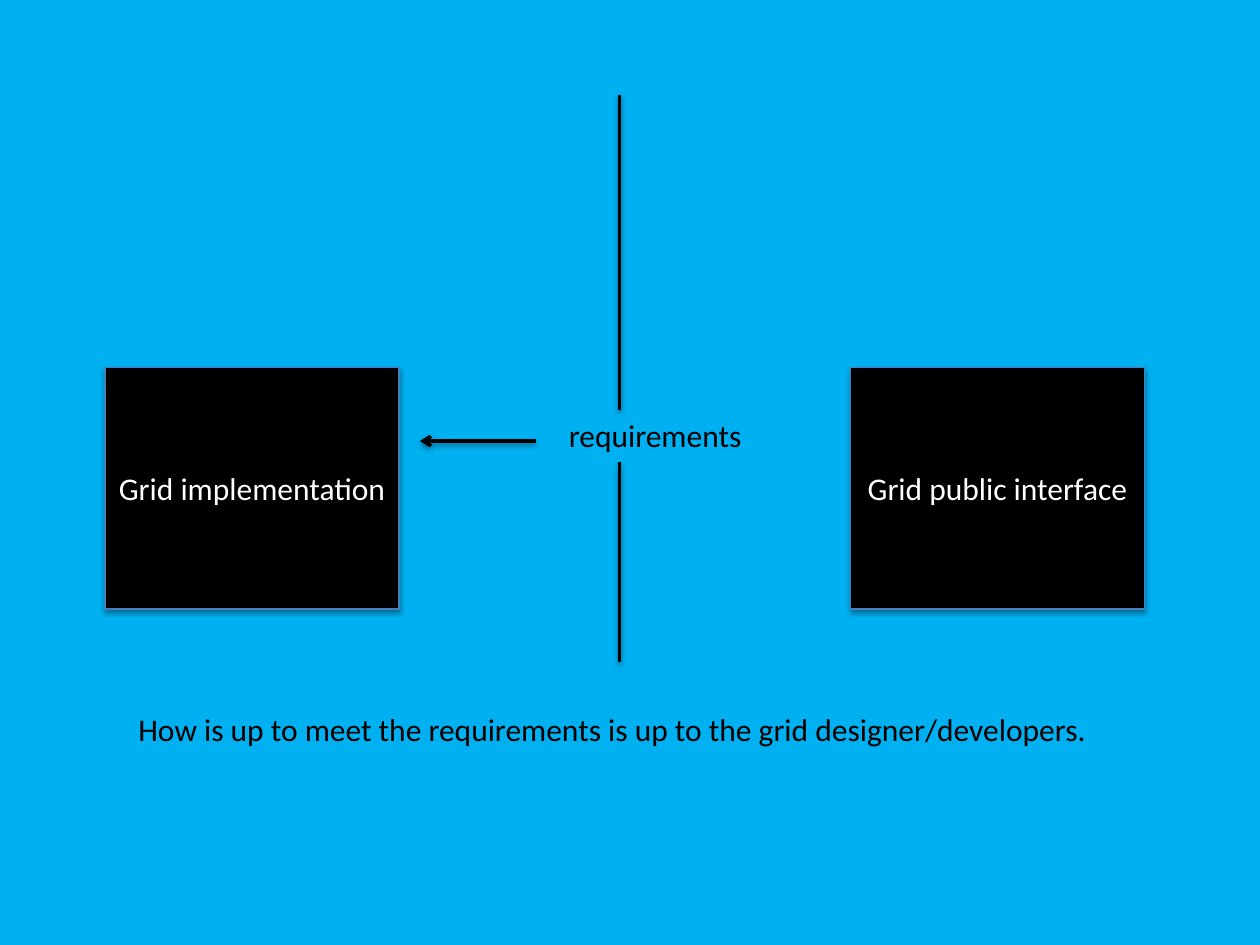
"""Build the slide that separates the grid implementation from its public interface."""
from typing import NamedTuple

from lxml import etree
from pptx import Presentation
from pptx.dml.color import RGBColor
from pptx.enum.shapes import MSO_CONNECTOR, MSO_SHAPE
from pptx.enum.text import MSO_ANCHOR, MSO_AUTO_SIZE, PP_ALIGN
from pptx.oxml.ns import qn
from pptx.util import Inches, Pt

RECT = MSO_SHAPE.RECTANGLE
STRAIGHT = MSO_CONNECTOR.STRAIGHT
CENTER = PP_ALIGN.CENTER
LEFT = PP_ALIGN.LEFT
MIDDLE = MSO_ANCHOR.MIDDLE
GROW = MSO_AUTO_SIZE.SHAPE_TO_FIT_TEXT

WIDTH, HEIGHT = Inches(10), Inches(7.5)
COLS, ROWS = 120, 90
BLACK, WHITE, SKY, EDGE = "000000", "FFFFFF", "00B0F0", "4B7EBC"

BOX_TOP, BOX_COLS, BOX_ROWS = 35, 28, 23
DIVIDER_COL = 59
LABEL_ROWS = 4.8


class Box(NamedTuple):
    """A black component box at a grid column."""
    col: float
    text: str


class Rule(NamedTuple):
    """A straight line between two grid points."""
    col1: float
    row1: float
    col2: float
    row2: float
    arrow: bool = False


class Label(NamedTuple):
    """A line of free text on the grid."""
    col: float
    row: float
    cols: float
    text: str


BOXES = [Box(10, "Grid implementation"), Box(81, "Grid public interface")]
RULES = [
    Rule(DIVIDER_COL, 9, DIVIDER_COL, 39),
    Rule(DIVIDER_COL, 44, DIVIDER_COL, 63),
    Rule(51, 42, 40, 42, arrow=True),
]
LABELS = [
    Label(53, 39, 19.2, "requirements"),
    Label(12, 67, 94, "How is up to meet the requirements is up to the grid designer/developers."),
]


def x(col: float) -> int:
    """Return the horizontal position of a grid column."""
    return round(WIDTH * col / COLS)


def y(row: float) -> int:
    """Return the vertical position of a grid row."""
    return round(HEIGHT * row / ROWS)


def rgb(color: str) -> RGBColor:
    """Return the colour for a hex string."""
    return RGBColor.from_string(color)


def add_shadow(sp, alpha: int, distance: float) -> None:
    """Give a shape or connector a soft shadow straight below it."""
    props = sp._element.spPr
    for old in props.findall(qn("a:effectLst")):
        props.remove(old)
    effects = etree.SubElement(props, qn("a:effectLst"))
    shadow = etree.SubElement(effects, qn("a:outerShdw"), blurRad=str(Pt(3.1)),
                              dist=str(Pt(distance)), dir="5400000", rotWithShape="0")
    color = etree.SubElement(shadow, qn("a:srgbClr"), val=BLACK)
    etree.SubElement(color, qn("a:alpha"), val=str(alpha * 1000))


def set_text(tf, text: str, color: str, align: PP_ALIGN) -> None:
    """Write one formatted paragraph."""
    tf.text = text
    p = tf.paragraphs[0]
    p.alignment = align
    font = p.runs[0].font
    font.name, font.size = "Calibri", Pt(18)
    font.color.rgb = rgb(color)


def draw_box(s, box: Box) -> None:
    """Draw a component box with centred text."""
    sp = s.shapes.add_shape(RECT, x(box.col), y(BOX_TOP), x(BOX_COLS), y(BOX_ROWS))
    sp.fill.solid()
    sp.fill.fore_color.rgb = rgb(BLACK)
    sp.line.color.rgb = rgb(EDGE)
    sp.line.width = Pt(0.75)
    add_shadow(sp, 35, 1.8)
    sp.text_frame.vertical_anchor = MIDDLE
    set_text(sp.text_frame, box.text, WHITE, CENTER)


def draw_rule(s, rule: Rule) -> None:
    """Draw a line, with an arrowhead at its end if asked."""
    sp = s.shapes.add_connector(STRAIGHT, x(rule.col1), y(rule.row1), x(rule.col2), y(rule.row2))
    sp.line.color.rgb = rgb(BLACK)
    sp.line.width = Pt(2)
    if rule.arrow:
        etree.SubElement(sp.line._get_or_add_ln(), qn("a:tailEnd"), type="arrow")
    add_shadow(sp, 38, 1.6)


def draw_label(s, label: Label) -> None:
    """Draw an unwrapped line of text."""
    sp = s.shapes.add_textbox(x(label.col), y(label.row), x(label.cols), y(LABEL_ROWS))
    tf = sp.text_frame
    tf.word_wrap = False
    tf.auto_size = GROW
    set_text(tf, label.text, BLACK, LEFT)


def main() -> None:
    """Build and save the slide."""
    prs = Presentation()
    prs.slide_width, prs.slide_height = WIDTH, HEIGHT
    s = prs.slides.add_slide(prs.slide_layouts[6])
    s.background.fill.solid()
    s.background.fill.fore_color.rgb = rgb(SKY)
    for box in BOXES:
        draw_box(s, box)
    for rule in RULES:
        draw_rule(s, rule)
    for label in LABELS:
        draw_label(s, label)
    prs.save("out.pptx")


if __name__ == "__main__":
    main()
